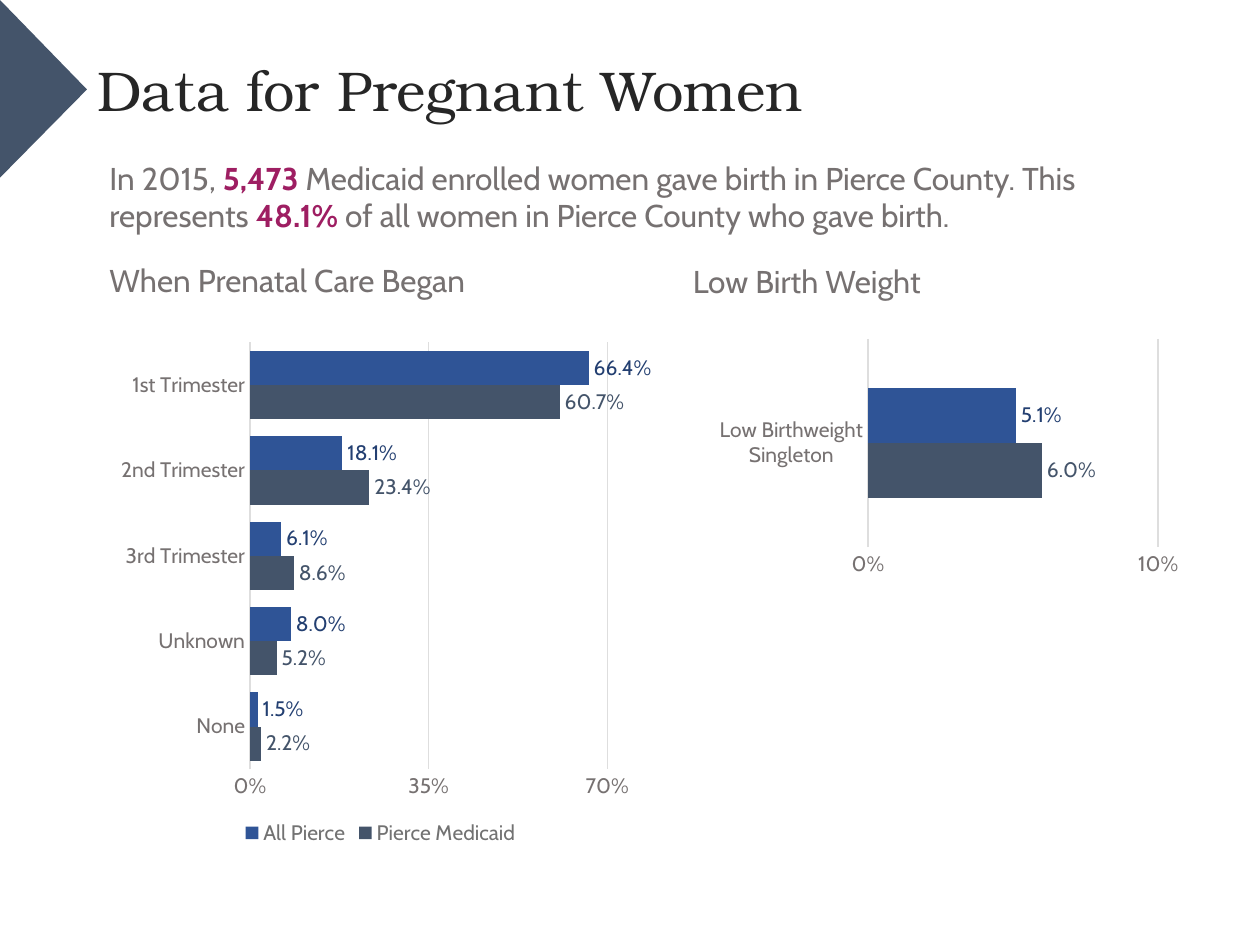
from pptx import Presentation
from pptx.chart.data import CategoryChartData
from pptx.dml.color import RGBColor
from pptx.enum.chart import XL_CHART_TYPE, XL_LABEL_POSITION, XL_LEGEND_POSITION, XL_TICK_MARK
from pptx.enum.text import MSO_ANCHOR, MSO_AUTO_SIZE, PP_ALIGN
from pptx.oxml import parse_xml
from pptx.oxml.ns import nsdecls, qn
from pptx.util import Inches, Pt

SLATE = RGBColor(0x44, 0x54, 0x6A)
BLUE = RGBColor(0x2F, 0x54, 0x96)
NAVY = RGBColor(0x23, 0x3F, 0x71)
GRAY = RGBColor(0x76, 0x71, 0x71)
LEGEND_GRAY = RGBColor(0x72, 0x72, 0x72)
GRID_GRAY = RGBColor(0xDE, 0xDE, 0xDE)
MAGENTA = RGBColor(0x9E, 0x1E, 0x62)
BLACK = RGBColor(0x26, 0x26, 0x26)
BODY_FONT = "Cabin"
TITLE_FONT = "TeX Gyre Bonum"
SERIES_COLORS = {"Pierce Medicaid": (SLATE, SLATE), "All Pierce": (BLUE, NAVY)}


def set_values(target, values):
    """Set each attribute in a dict of format values."""
    for name, value in values.items():
        setattr(target, name, value)


def set_font(font, size, color, name=BODY_FONT, bold=False):
    """Format a font."""
    set_values(font, {"name": name, "size": Pt(size), "bold": bold})
    font.color.rgb = color


def set_line(line):
    """Give a chart line the grid style."""
    line.width = Pt(0.75)
    line.color.rgb = GRID_GRAY


def add_arrow(slide):
    """Draw the triangle at the left edge."""
    builder = slide.shapes.build_freeform(0, 0)
    builder.add_line_segments([(Inches(0.69), Inches(0.71)), (0, Inches(1.41))], close=True)
    shape = builder.convert_to_shape()
    shape.shadow.inherit = False
    shape.fill.solid()
    shape.fill.fore_color.rgb = SLATE
    shape.line.fill.background()


def fill_title(slide, text):
    """Place and format the title placeholder."""
    title = slide.shapes.title
    set_values(title, {"left": Inches(0.77), "top": Inches(0.06),
                       "width": Inches(9), "height": Inches(1.25)})
    title.text = text
    set_values(title.text_frame, {
        "margin_left": 0, "margin_right": 0, "margin_top": Inches(0.05), "margin_bottom": 0,
        "vertical_anchor": MSO_ANCHOR.MIDDLE, "word_wrap": True,
        "auto_size": MSO_AUTO_SIZE.NONE})
    paragraph = title.text_frame.paragraphs[0]
    paragraph.alignment = PP_ALIGN.LEFT
    set_font(paragraph.runs[0].font, 32, BLACK, TITLE_FONT)


def add_text(slide, box, pieces):
    """Add a text box from (text, highlighted) pieces."""
    frame = slide.shapes.add_textbox(*map(Inches, box)).text_frame
    set_values(frame, {"word_wrap": True, "auto_size": MSO_AUTO_SIZE.SHAPE_TO_FIT_TEXT})
    for text, highlighted in pieces:
        run = frame.paragraphs[0].add_run()
        run.text = text
        set_font(run.font, 18, MAGENTA if highlighted else GRAY, bold=highlighted)


def set_plot_layout(chart, box):
    """Fix the inner plot area as fractions of the chart."""
    plot_area = chart._chartSpace.chart.plotArea
    for layout in plot_area.findall(qn("c:layout")):
        plot_area.remove(layout)
    modes = "".join(f'<c:{axis}Mode val="edge"/>' for axis in "xy")
    sizes = "".join(f'<c:{name} val="{value}"/>' for name, value in zip("xywh", box))
    plot_area.insert(0, parse_xml(
        f'<c:layout {nsdecls("c")}><c:manualLayout><c:layoutTarget val="inner"/>'
        f"{modes}{sizes}</c:manualLayout></c:layout>"))


def format_axes(chart, maximum, major_unit):
    """Format the category and value axes."""
    for axis in (chart.category_axis, chart.value_axis):
        set_values(axis, {"major_tick_mark": XL_TICK_MARK.NONE,
                          "minor_tick_mark": XL_TICK_MARK.NONE})
        set_font(axis.tick_labels.font, 12, GRAY)
    set_line(chart.category_axis.format.line)
    value_axis = chart.value_axis
    set_values(value_axis, {"minimum_scale": 0, "maximum_scale": maximum,
                            "major_unit": major_unit, "has_major_gridlines": True})
    set_values(value_axis.tick_labels, {"number_format": "0%", "number_format_is_linked": False})
    value_axis.format.line.fill.background()
    set_line(value_axis.major_gridlines.format.line)


def format_series(series):
    """Color the bars and their value labels."""
    fill_color, label_color = SERIES_COLORS[series.name]
    series.format.fill.solid()
    series.format.fill.fore_color.rgb = fill_color
    labels = series.data_labels
    set_values(labels, {"show_value": True, "number_format": "0.0%",
                        "number_format_is_linked": False,
                        "position": XL_LABEL_POSITION.OUTSIDE_END})
    set_font(labels.font, 12, label_color)


def add_bar_chart(slide, box, categories, rows, gap, scale, layout, has_legend):
    """Add a clustered bar chart of percentages."""
    data = CategoryChartData(number_format="0.0%")
    data.categories = categories
    for name, values in zip(SERIES_COLORS, rows):
        data.add_series(name, values)
    chart = slide.shapes.add_chart(
        XL_CHART_TYPE.BAR_CLUSTERED, *map(Inches, box), data).chart
    set_font(chart.font, 10, BLACK)
    set_values(chart, {"has_title": False, "has_legend": has_legend})
    if has_legend:
        set_values(chart.legend, {"position": XL_LEGEND_POSITION.BOTTOM,
                                  "include_in_layout": False})
        set_font(chart.legend.font, 12, LEGEND_GRAY)
    plot = chart.plots[0]
    set_values(plot, {"gap_width": gap, "vary_by_categories": False})
    for series in plot.series:
        format_series(series)
    format_axes(chart, *scale)
    set_plot_layout(chart, layout)


def main():
    """Build and save the slide."""
    presentation = Presentation()
    set_values(presentation, {"slide_width": Inches(10), "slide_height": Inches(7.5)})
    slide = presentation.slides.add_slide(presentation.slide_layouts[5])
    add_arrow(slide)
    fill_title(slide, "Data for Pregnant Women")
    add_bar_chart(
        slide, (0.77, 2.46, 4.5, 4.29),
        ["None", "Unknown", "3rd Trimester", "2nd Trimester", "1st Trimester"],
        [(0.022, 0.052, 0.086, 0.234, 0.607), (0.015, 0.08, 0.061, 0.181, 0.664)],
        50, (0.7, 0.35), (0.27, 0.06, 0.63, 0.79), True)
    add_text(slide, (0.77, 1.21, 8.39, 0.71), [
        ("In 2015, ", False), ("5,473 ", True),
        ("Medicaid enrolled women gave birth in Pierce County. This represents ", False),
        ("48.1% ", True), ("of all women in Pierce County who gave birth.", False)])
    add_bar_chart(
        slide, (5.5, 2.55, 3.97, 2.33), ["Low Birthweight Singleton"], [(0.06,), (0.051,)],
        182, (0.1, 0.1), (0.35, 0.06, 0.58, 0.71), False)
    add_text(slide, (0.77, 2.02, 4.5, 0.4), [("When Prenatal Care Began", False)])
    add_text(slide, (5.4, 2.03, 3.74, 0.4), [("Low Birth Weight", False)])
    presentation.save("out.pptx")


if __name__ == "__main__":
    main()
